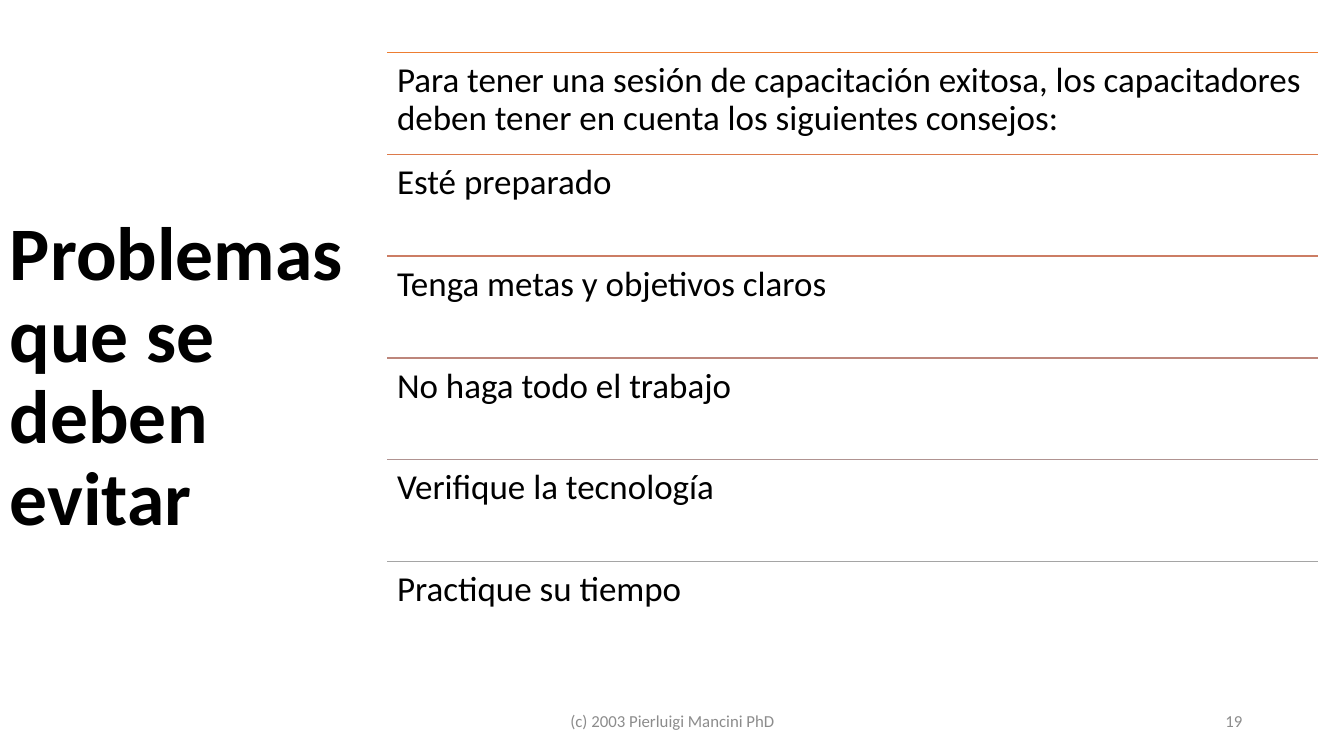
from lxml.etree import SubElement
from pptx import Presentation
from pptx.dml.color import RGBColor
from pptx.enum.shapes import MSO_CONNECTOR as Connector
from pptx.enum.text import MSO_ANCHOR as Anchor, PP_ALIGN as Align
from pptx.oxml.ns import qn
from pptx.util import Pt

EMU_PER_PX = 9144
BLACK = RGBColor(0x00, 0x00, 0x00)
GRAY = RGBColor(0x8C, 0x8C, 0x8C)
TIPS = [
    ("Para tener una sesión de capacitación exitosa, los capacitadores "
     "deben tener en cuenta los siguientes consejos:", RGBColor(0xED, 0x7D, 0x31)),
    ("Esté preparado", RGBColor(0xDC, 0x7A, 0x4B)),
    ("Tenga metas y objetivos claros", RGBColor(0xCC, 0x7D, 0x64)),
    ("No haga todo el trabajo", RGBColor(0xBD, 0x86, 0x7B)),
    ("Verifique la tecnología", RGBColor(0xB0, 0x93, 0x91)),
    ("Practique su tiempo", RGBColor(0xA5, 0xA5, 0xA5)),
]
LIST_LEFT, LIST_TOP, LIST_WIDTH, ROW_HEIGHT = 384, 52, 923, 101
FOOTER_TOP, FOOTER_HEIGHT = 695, 40


def px(*lengths):
    """Turn pixel lengths into EMU."""
    return [length * EMU_PER_PX for length in lengths]


class SlideBuilder:
    """Hold the font and the slide being drawn."""

    font_name = "Calibri"

    def __init__(self, slide):
        self.slide = slide

    def text(self, text, box, font, paragraph_format, frame_format):
        """Add a wrapped text box with one formatted paragraph."""
        frame = self.slide.shapes.add_textbox(*px(*box)).text_frame
        paragraph = frame.paragraphs[0]
        run = paragraph.add_run()
        run.text = text
        run.font.color.rgb = font["color"]
        run_format = {"name": self.font_name, "size": Pt(font["size"]),
                      "bold": font.get("bold", False)}
        for target, values in ((frame, {"word_wrap": True, **frame_format}),
                               (paragraph, paragraph_format),
                               (run.font, run_format)):
            for name, value in values.items():
                setattr(target, name, value)

    def rule(self, left, top, width, color):
        """Add a thin horizontal line without a shadow."""
        line = self.slide.shapes.add_connector(
            Connector.STRAIGHT, *px(left, top, left + width, top))
        line.line.color.rgb = color
        line.line.width = Pt(1)
        SubElement(line._element.spPr, qn("a:effectLst"))

    def title(self, text, box):
        """Add the large bold title."""
        self.text(text, box, {"size": 54, "color": BLACK, "bold": True},
                  {"line_spacing": 0.9}, {"vertical_anchor": Anchor.MIDDLE})

    def tip(self, text, box, color):
        """Add a list row under its coloured line."""
        left, top, width, _ = box
        self.rule(left, top, width, color)
        margin, = px(10)
        sides = ("left", "top", "right", "bottom")
        self.text(text, box, {"size": 25, "color": BLACK}, {"line_spacing": 0.9},
                  {f"margin_{side}": margin for side in sides})

    def footer(self, text, left, width, alignment):
        """Add a small gray text in the footer band."""
        self.text(text, (left, FOOTER_TOP, width, FOOTER_HEIGHT),
                  {"size": 12, "color": GRAY},
                  {"alignment": alignment, "space_after": Pt(6)},
                  {"vertical_anchor": Anchor.MIDDLE})


def main():
    """Build and save the slide."""
    presentation = Presentation()
    presentation.slide_width, presentation.slide_height = px(1333, 750)
    builder = SlideBuilder(presentation.slides.add_slide(presentation.slide_layouts[6]))
    builder.footer("(c) 2003 Pierluigi Mancini PhD", 442, 450, Align.CENTER)
    builder.footer("19", 942, 300, Align.RIGHT)
    builder.title("Problemas que se deben evitar", (0, 70, 374, 611))
    for index, (text, color) in enumerate(TIPS):
        top = LIST_TOP + index * ROW_HEIGHT
        builder.tip(text, (LIST_LEFT, top, LIST_WIDTH, ROW_HEIGHT), color)
    presentation.save("out.pptx")


if __name__ == "__main__":
    main()
